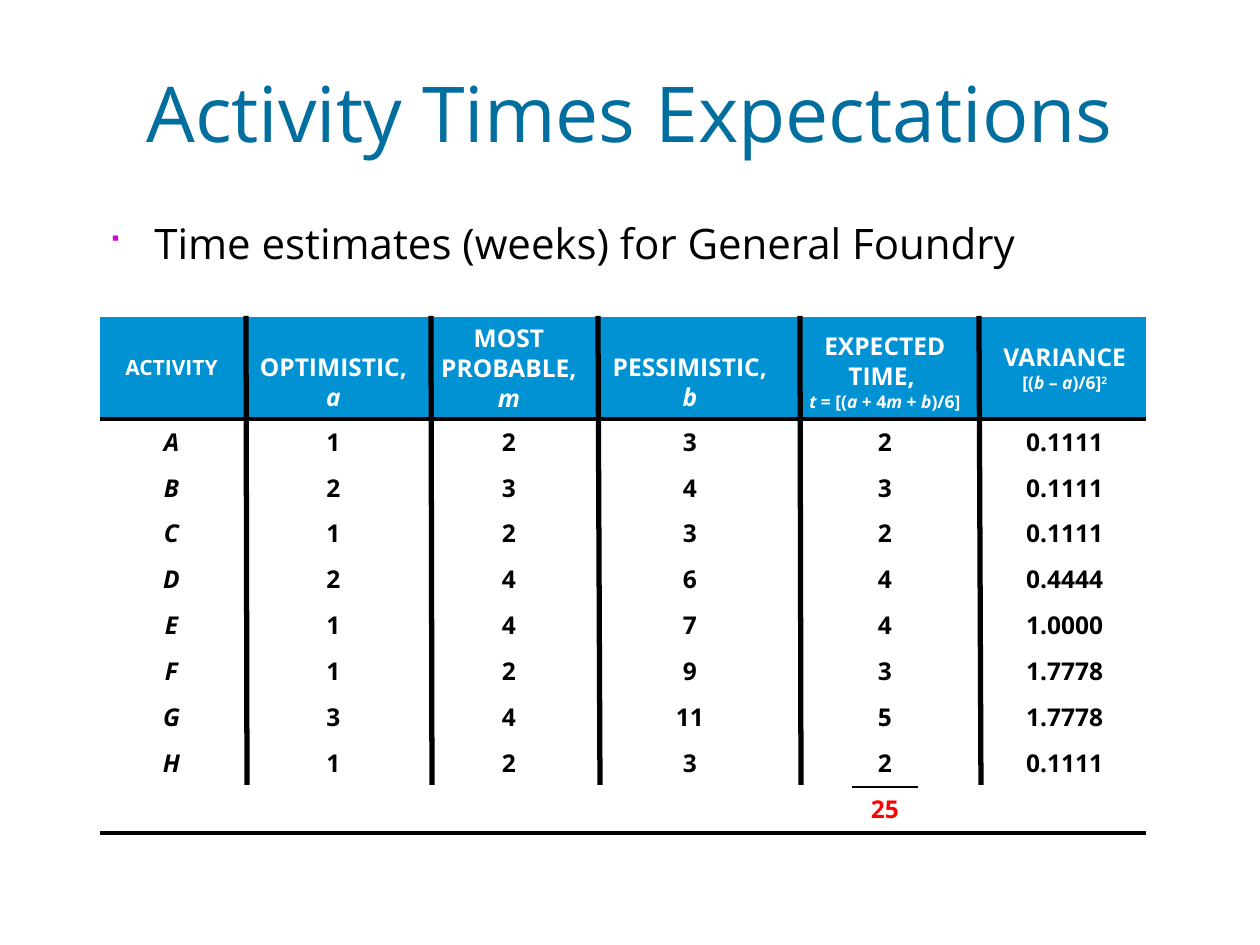
from lxml.etree import SubElement
from pptx import Presentation
from pptx.dml.color import RGBColor
from pptx.enum.shapes import MSO_CONNECTOR
from pptx.enum.text import MSO_ANCHOR, PP_ALIGN
from pptx.oxml import parse_xml
from pptx.oxml.ns import nsdecls, qn
from pptx.util import Emu, Pt


def px(value):
    return Emu(round(value * 914400 / 126))


def write_paragraph(text_frame, runs, alignment, color, **text_format):
    """Fill the first paragraph with (text, style, size) runs; style is i, sup or empty."""
    paragraph = text_frame.paragraphs[0]
    paragraph.alignment = alignment
    paragraph.line_spacing = 0.9
    properties = paragraph._p.get_or_add_pPr()
    space_before = SubElement(properties, qn("a:spcBef"))
    SubElement(space_before, qn("a:spcPct")).set("val", "20000")
    for text, style, size in runs:
        if text == "\n":
            paragraph.add_line_break()
            continue
        run = paragraph.add_run()
        run.text = text
        values = {"name": "Open Sans", "size": Pt(size), "italic": style == "i", **text_format}
        for name, value in values.items():
            setattr(run.font, name, value)
        run.font.color.rgb = RGBColor.from_string(color)
        if style == "sup":
            run.font._element.set("baseline", "30000")
    return properties


presentation = Presentation()
presentation.slide_width = px(1260)
presentation.slide_height = px(945)
slide = presentation.slides.add_slide(presentation.slide_layouts[6])

# Title
title = slide.shapes.add_textbox(px(95), px(53), px(1071), px(130)).text_frame
title.word_wrap = True
title.vertical_anchor = MSO_ANCHOR.MIDDLE
write_paragraph(title, [("Activity Times Expectations", "", 44)], PP_ALIGN.CENTER, "006E9E")

# Bulleted subtitle
subtitle = slide.shapes.add_textbox(px(95), px(217), px(1071), px(62)).text_frame
subtitle.word_wrap = True
properties = write_paragraph(
    subtitle, [("Time estimates (weeks) for General Foundry", "", 24)], PP_ALIGN.LEFT, "000000")
properties.set("marL", str(px(47)))
properties.set("indent", str(-px(47)))
bullet_color = SubElement(properties, qn("a:buClr"))
SubElement(bullet_color, qn("a:srgbClr")).set("val", "D300D0")
SubElement(properties, qn("a:buSzPct")).set("val", "85000")
SubElement(properties, qn("a:buFont")).set("typeface", "Wingdings")
SubElement(properties, qn("a:buChar")).set("char", "■")

# Table content: header runs by column, then the activities
headers = {
    0: [("ACTIVITY", "", 12)],
    1: [("OPTIMISTIC, ", "", 14), ("a", "i", 14)],
    2: [("MOST PROBABLE, ", "", 14), ("m", "i", 14)],
    3: [("PESSIMISTIC, ", "", 14), ("b", "i", 14)],
    4: [("EXPECTED TIME, ", "", 14), ("\n", "", 14), ("t", "i", 10), (" = [(", "", 10),
        ("a", "i", 10), (" + 4", "", 10), ("m", "i", 10), (" + ", "", 10),
        ("b", "i", 10), (")/6]", "", 10)],
    7: [("VARIANCE", "", 14), ("\n", "", 14), ("[(", "", 10), ("b", "i", 10),
        (" – ", "", 10), ("a", "i", 10), (")/6]", "", 10), ("2", "sup", 10)],
}
activities = [
    ("A", "1", "2", "3", "2", "0.1111"),
    ("B", "2", "3", "4", "3", "0.1111"),
    ("C", "1", "2", "3", "2", "0.1111"),
    ("D", "2", "4", "6", "4", "0.4444"),
    ("E", "1", "4", "7", "4", "1.0000"),
    ("F", "1", "2", "9", "3", "1.7778"),
    ("G", "3", "4", "11", "5", "1.7778"),
    ("H", "1", "2", "3", "2", "0.1111"),
    ("", "", "", "", "25", ""),
]
value_columns = (0, 1, 2, 3, 5, 7)
column_widths = (143, 181, 170, 192, 66, 66, 66, 162)

# Table grid
table = slide.shapes.add_table(
    len(activities) + 1, len(column_widths), px(100), px(317), px(1046), px(516)).table
table.first_row = False
table.horz_banding = False
table._tbl.tblPr.find(qn("a:tableStyleId")).text = "{2D5ABB26-0587-4C30-8999-92F81FD0307C}"
for column, width in zip(table.columns, column_widths):
    column.width = px(width)
for index, row in enumerate(table.rows):
    row.height = px(46 if index else 102)
table.cell(0, 4).merge(table.cell(0, 6))

# Table cells
for row, values in enumerate([None, *activities]):
    row_values = dict(zip(value_columns, values)) if row else {}
    for column in range(len(column_widths)):
        cell = table.cell(row, column)
        cell.vertical_anchor = MSO_ANCHOR.MIDDLE
        color = "000000"
        if row == 0:
            cell.fill.solid()
            cell.fill.fore_color.rgb = RGBColor.from_string("0092D3")
            runs, color = headers.get(column, []), "FFFFFF"
            if 1 <= column <= 4:
                cell.vertical_anchor = MSO_ANCHOR.BOTTOM
        else:
            cell.fill.background()
            text = row_values.get(column, "")
            runs = [(text, "" if column else "i", 14)] if text else []
            if text == "25":
                color = "FF0000"
        if runs:
            write_paragraph(cell.text_frame, runs, PP_ALIGN.CENTER, color, bold=True)
        else:
            SubElement(cell.text_frame.paragraphs[0]._p, qn("a:endParaRPr")).set("sz", "1200")

# Horizontal rules under the header, the last activity and the total
all_columns = range(len(column_widths))
for row, columns, width in [(0, all_columns, 2.25), (8, [5], 1.5), (9, all_columns, 2.25)]:
    for column in columns:
        cell_properties = table.cell(row, column)._tc.get_or_add_tcPr()
        cell_properties.insert(0, parse_xml(
            f'<a:lnB {nsdecls("a")} w="{Pt(width)}"><a:solidFill>'
            f'<a:srgbClr val="000000"/></a:solidFill></a:lnB>'))

# Column dividers
for top_x, bottom_x in [(979, 981), (800, 801), (598, 600), (431, 432), (246, 247)]:
    divider = slide.shapes.add_connector(
        MSO_CONNECTOR.STRAIGHT, px(top_x), px(316), px(bottom_x), px(785))
    divider.line.width = Pt(3)
    divider.line.color.rgb = RGBColor.from_string("000000")
    SubElement(divider._element.spPr, qn("a:effectLst"))

presentation.save("out.pptx")
